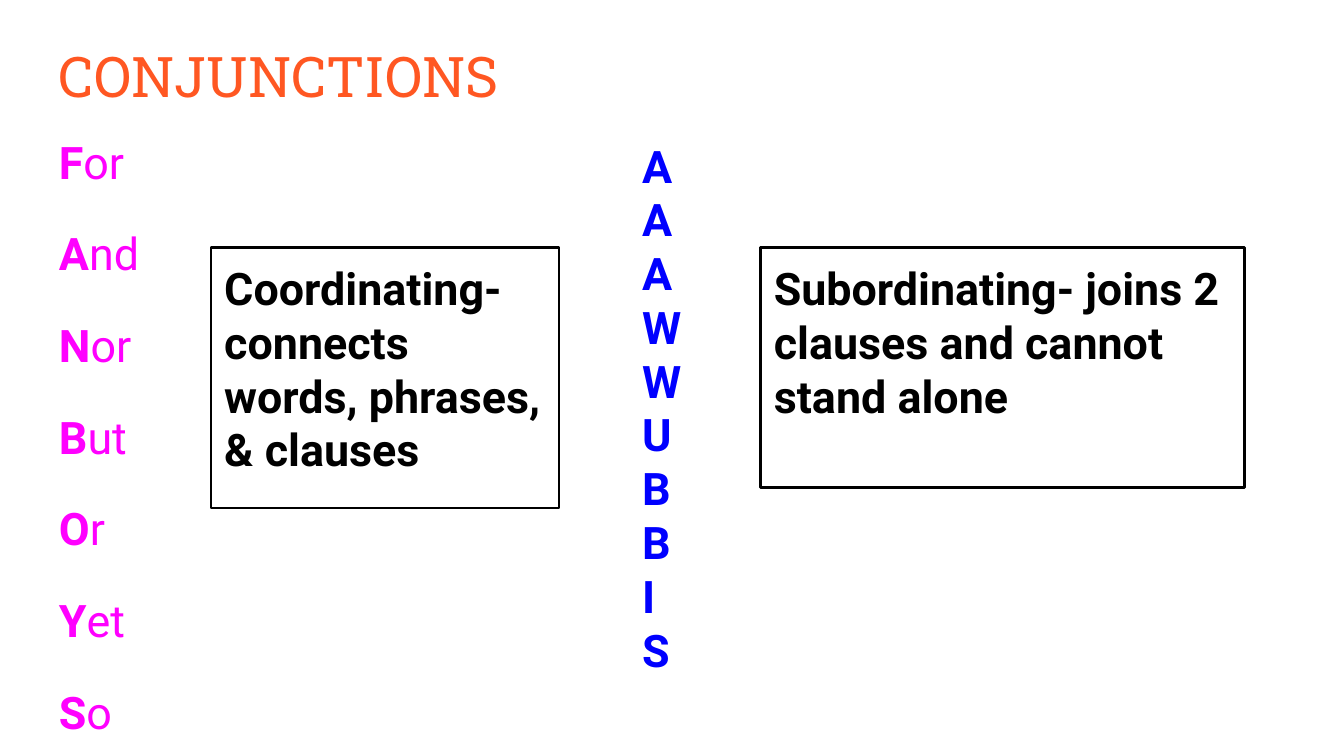
from dataclasses import dataclass

from pptx import Presentation
from pptx.dml.color import RGBColor
from pptx.enum.shapes import MSO_SHAPE
from pptx.enum.text import MSO_ANCHOR, PP_ALIGN
from pptx.util import Inches, Pt

RECTANGLE = MSO_SHAPE.RECTANGLE
TOP = MSO_ANCHOR.TOP
LEFT = PP_ALIGN.LEFT


@dataclass(frozen=True)
class Theme:
    title_font: str = "Roboto Slab"
    body_font: str = "Roboto"
    title_size: int = 30
    body_size: int = 24
    orange: str = "FF5722"
    magenta: str = "FF00FF"
    blue: str = "0000FF"
    black: str = "000000"


theme = Theme()


def prepare_frame(shape):
    frame = shape.text_frame
    frame.word_wrap = True
    frame.vertical_anchor = TOP
    frame.margin_left = frame.margin_right = Inches(0.1)
    frame.margin_top = frame.margin_bottom = Inches(0.1)
    return frame


def add_run(paragraph, text, color, bold=True, font=theme.body_font, size=theme.body_size):
    paragraph.alignment = LEFT
    run = paragraph.add_run()
    run.text = text
    run.font.name = font
    run.font.size = Pt(size)
    run.font.bold = bold
    run.font.color.rgb = RGBColor.from_string(color)


deck = Presentation()
deck.slide_width = Inches(10)
deck.slide_height = Inches(10 * 9 / 16)
slide = deck.slides.add_slide(deck.slide_layouts[6])

heading = slide.shapes.add_textbox(Inches(0.34), Inches(0.21), Inches(9.32), Inches(0.63))
add_run(prepare_frame(heading).paragraphs[0], "CONJUNCTIONS", theme.orange,
        bold=False, font=theme.title_font, size=theme.title_size)

fanboys = slide.shapes.add_textbox(Inches(0.34), Inches(0.84), Inches(9.32), Inches(4.59))
fanboys_frame = prepare_frame(fanboys)
for index, word in enumerate(["For", "And", "Nor", "But", "Or", "Yet", "So"]):
    line = fanboys_frame.add_paragraph() if index else fanboys_frame.paragraphs[0]
    line.line_spacing = 1.15
    line.space_after = Pt(16)
    add_run(line, word[0], theme.magenta)
    add_run(line, word[1:], theme.magenta, bold=False)

aaawwubbis = slide.shapes.add_textbox(Inches(4.68), Inches(0.93), Inches(1.67), Inches(4.4))
aaawwubbis_frame = prepare_frame(aaawwubbis)
for index, letters in enumerate(["A", "A", "A", "W", "W", "U", "BBIS"]):
    line = aaawwubbis_frame.add_paragraph() if index else aaawwubbis_frame.paragraphs[0]
    for position, letter in enumerate(letters):
        if position:
            line.add_line_break()
        add_run(line, letter, theme.blue)

definitions = [
    (1.57, 2.59, 1.94, "Coordinating- connects words, phrases, & clauses"),
    (5.66, 3.6, 1.79, "Subordinating- joins 2 clauses and cannot stand alone"),
]
for left, width, height, meaning in definitions:
    definition = slide.shapes.add_shape(
        RECTANGLE, Inches(left), Inches(1.84), Inches(width), Inches(height))
    definition.shadow.inherit = False
    definition.fill.background()
    definition.line.color.rgb = RGBColor.from_string(theme.black)
    definition.line.width = Pt(1.5)
    add_run(prepare_frame(definition).paragraphs[0], meaning, theme.black)

deck.save("out.pptx")
